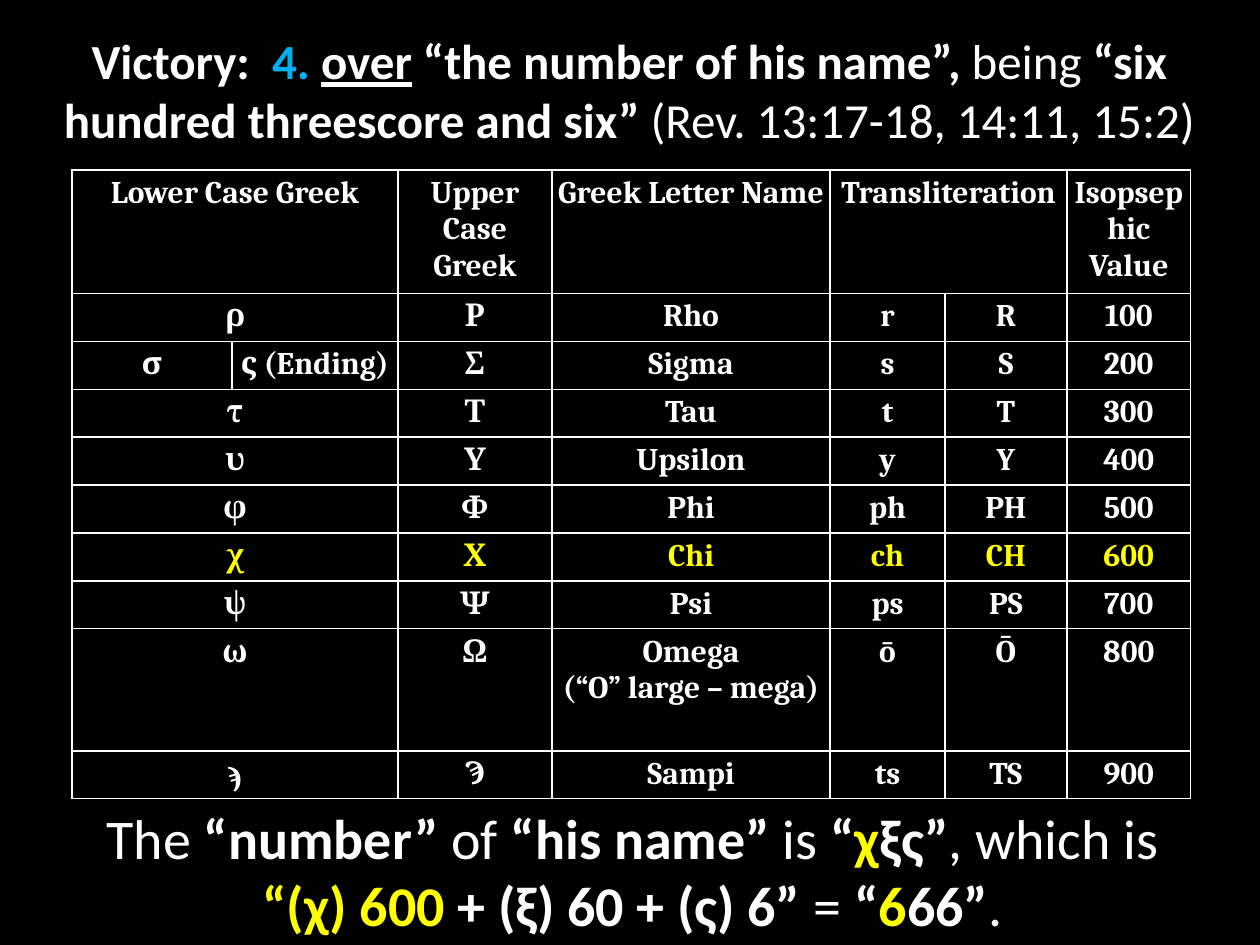
from lxml import etree
from pptx import Presentation
from pptx.dml.color import RGBColor
from pptx.enum.text import MSO_ANCHOR, PP_ALIGN
from pptx.oxml.ns import qn
from pptx.util import Inches, Pt

CENTER = PP_ALIGN.CENTER
TOP, MIDDLE = MSO_ANCHOR.TOP, MSO_ANCHOR.MIDDLE
BLACK = RGBColor(0x00, 0x00, 0x00)
WHITE = RGBColor(0xFF, 0xFF, 0xFF)
BLUE = RGBColor(0x00, 0xB0, 0xF0)
YELLOW = RGBColor(0xFF, 0xFF, 0x00)

COLUMN_WIDTHS = [1.27, 1.32, 1.22, 2.21, 0.91, 0.97, 0.98]
ROW_HEIGHT, TALL_ROW_HEIGHT = 0.38, 0.97
CELL_MARGIN = Inches(0.04)

# None marks a cell joined to the one on its left
LETTER_ROWS = [
    ["Lower Case Greek", None, "Upper Case Greek", "Greek Letter Name",
     "Transliteration", None, "Isopsephic Value"],
    ["ρ", None, "Ρ", "Rho", "r", "R", "100"],
    ["σ", "ς (Ending)", "Σ", "Sigma", "s", "S", "200"],
    ["τ", None, "Τ", "Tau", "t", "T", "300"],
    ["υ", None, "Υ", "Upsilon", "y", "Y", "400"],
    ["φ", None, "Φ", "Phi", "ph", "PH", "500"],
    ["χ", None, "Χ", "Chi", "ch", "CH", "600"],
    ["ψ", None, "Ψ", "Psi", "ps", "PS", "700"],
    ["ω", None, "Ω", "Omega\n(“O” large – mega)", "ō", "Ō", "800"],
    ["ϡ", None, "Ϡ", "Sampi", "ts", "TS", "900"],
]
TALL_ROWS = ("Lower Case Greek", "ω")
HIGHLIGHTED_ROW = "χ"

BOLD = {"bold": True}
BOLD_YELLOW = {"bold": True, "color": YELLOW}
TITLE = [
    ("Victory:  ", BOLD),
    ("4. ", {"bold": True, "color": BLUE}),
    ("over", {"bold": True, "underline": True}),
    (" ", {}),
    ("“the number of his name”,", BOLD),
    (" being ", {}),
    ("“six hundred threescore and six”", BOLD),
    (" (Rev. 13:17-18, 14:11, 15:2)", {}),
]
CONCLUSION = [
    [("The ", {}), ("“number”", BOLD), (" of ", {}), ("“his name”", BOLD),
     (" is ", {}), ("“", BOLD), ("χ", BOLD_YELLOW), ("ξς”", BOLD),
     (", which is", {})],
    [("“(χ) 600", BOLD_YELLOW), (" + (ξ) 60 + (ς) 6”", BOLD), (" = ", {}),
     ("“", BOLD), ("6", BOLD_YELLOW), ("66”", BOLD), (".", {})],
]


def add_span(para, text, size=18, font="Calibri", color=WHITE, bold=False,
             underline=False):
    span = para.add_run()
    span.text = text
    span.font.size = Pt(size)
    span.font.name = font
    span.font.color.rgb = color
    span.font.bold = bold
    span.font.underline = underline


def fill_frame(frame, paragraphs, **text_format):
    """Write paragraphs, each a list of (text, format) spans, centred."""
    frame.word_wrap = True
    for index, spans in enumerate(paragraphs):
        para = frame.add_paragraph() if index else frame.paragraphs[0]
        para.alignment = CENTER
        for text, span_format in spans:
            add_span(para, text, **{**text_format, **span_format})


def add_text_region(page, box, paragraphs, anchor, size):
    frame = page.shapes.add_textbox(*map(Inches, box)).text_frame
    frame.vertical_anchor = anchor
    fill_frame(frame, paragraphs, size=size)


def style_cell(cell):
    """White border on every side, no fill, narrow margins."""
    properties = cell._tc.get_or_add_tcPr()
    for side in ("a:lnL", "a:lnR", "a:lnT", "a:lnB"):
        line = etree.SubElement(properties, qn(side), w=str(Pt(1)))
        fill = etree.SubElement(line, qn("a:solidFill"))
        etree.SubElement(fill, qn("a:srgbClr"), val=str(WHITE))
    cell.fill.background()
    cell.margin_left = cell.margin_right = CELL_MARGIN
    cell.margin_top = cell.margin_bottom = CELL_MARGIN


def add_letter_table(page, box):
    table = page.shapes.add_table(
        len(LETTER_ROWS), len(COLUMN_WIDTHS), *map(Inches, box)).table
    table.first_row = table.horz_banding = False
    for column, width in zip(table.columns, COLUMN_WIDTHS):
        column.width = Inches(width)
    for r, values in enumerate(LETTER_ROWS):
        tall = values[0] in TALL_ROWS
        table.rows[r].height = Inches(TALL_ROW_HEIGHT if tall else ROW_HEIGHT)
        color = YELLOW if values[0] == HIGHLIGHTED_ROW else WHITE
        for c, text in enumerate(values):
            cell = table.cell(r, c)
            style_cell(cell)
            if text is None:
                table.cell(r, c - 1).merge(cell)
                continue
            lines = [[(line, BOLD)] for line in text.split("\n")]
            fill_frame(cell.text_frame, lines, font="Cambria", color=color)


def main():
    deck = Presentation()
    deck.slide_width, deck.slide_height = Inches(10), Inches(7.5)
    page = deck.slides.add_slide(deck.slide_layouts[6])
    page.background.fill.solid()
    page.background.fill.fore_color.rgb = BLACK

    # Title, conclusion below, table between them
    add_text_region(page, (0.08, 0.25, 9.83, 0.92), [TITLE], MIDDLE, 28)
    add_text_region(page, (0.21, 6.33, 9.62, 1.18), CONCLUSION, TOP, 32)
    add_letter_table(page, (0.57, 1.35, 8.86, 5.02))
    deck.save("out.pptx")


if __name__ == "__main__":
    main()
